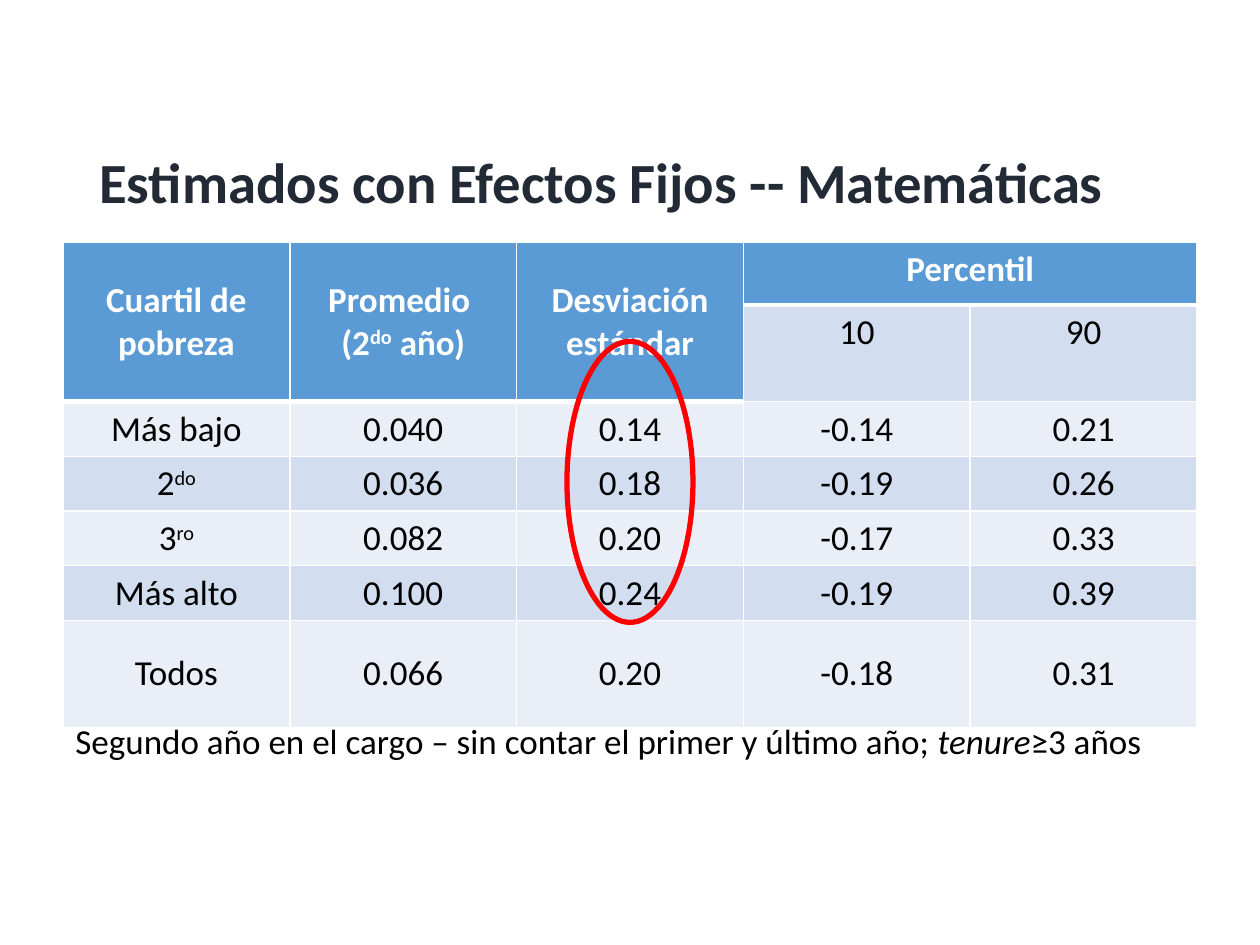
from dataclasses import dataclass

from lxml import etree
from pptx import Presentation
from pptx.dml.color import RGBColor
from pptx.enum.shapes import MSO_SHAPE
from pptx.enum.text import MSO_ANCHOR, PP_ALIGN
from pptx.oxml.ns import qn
from pptx.util import Inches, Pt

OVAL = MSO_SHAPE.OVAL
TOP, MIDDLE = MSO_ANCHOR.TOP, MSO_ANCHOR.MIDDLE
LEFT, CENTER = PP_ALIGN.LEFT, PP_ALIGN.CENTER


@dataclass(frozen=True)
class Theme:
    font: str = "Calibri"
    title_size: float = 32.4
    body_size: float = 20
    title: str = "222A35"
    text: str = "000000"
    white: str = "FFFFFF"
    header: str = "5B9BD5"
    bands: tuple = ("EAEFF7", "D2DEEF")
    highlight: str = "FF0000"
    thin: float = 1
    thick: float = 3


@dataclass(frozen=True)
class Span:
    text: str
    italic: bool = False
    superscript: bool = False


@dataclass(frozen=True)
class Style:
    size: float
    color: str
    bold: bool = False
    align: PP_ALIGN = LEFT


@dataclass(frozen=True)
class HeaderCell:
    row: int
    col: int
    last_row: int
    last_col: int
    lines: tuple
    anchor: MSO_ANCHOR = MIDDLE


THEME = Theme()
TITLE = Style(THEME.title_size, THEME.title, bold=True)
NOTE = Style(THEME.body_size, THEME.text)
HEADER = Style(THEME.body_size, THEME.white, bold=True, align=CENTER)
BODY = Style(THEME.body_size, THEME.text, align=CENTER)

HEADER_CELLS = (
    HeaderCell(0, 0, 1, 0, ((Span("Cuartil de pobreza"),),)),
    HeaderCell(0, 1, 1, 1, (
        (Span("Promedio "),),
        (Span("(2"), Span("do", superscript=True), Span(" año)")),
    )),
    HeaderCell(0, 2, 1, 2, ((Span("Desviación estándar"),),)),
    HeaderCell(0, 3, 0, 4, ((Span("Percentil"),),), TOP),
)
PERCENTILES = {3: "10", 4: "90"}
QUARTILES = (
    ((Span("Más bajo"),), "0.040", "0.14", "-0.14", "0.21"),
    ((Span("2"), Span("do", superscript=True)), "0.036", "0.18", "-0.19", "0.26"),
    ((Span("3"), Span("ro", superscript=True)), "0.082", "0.20", "-0.17", "0.33"),
    ((Span("Más alto"),), "0.100", "0.24", "-0.19", "0.39"),
    ((Span("Todos"),), "0.066", "0.20", "-0.18", "0.31"),
)
FOOTNOTE = (
    Span("Segundo año en el cargo – sin contar el primer y último año; "),
    Span("tenure", italic=True),
    Span("≥3 años"),
)
ROW_HEIGHTS = (0.5, 0.5, 0.41, 0.41, 0.41, 0.37, 0.85)
COLUMN_WIDTH = 1.8
COLUMNS = 5


def write(frame, lines: tuple, style: Style) -> None:
    """Fill a text frame with one paragraph per line of spans."""
    for index, spans in enumerate(lines):
        paragraph = frame.paragraphs[0] if index == 0 else frame.add_paragraph()
        paragraph.alignment = style.align
        font = paragraph.font
        font.name, font.size, font.bold = THEME.font, Pt(style.size), style.bold
        font.color.rgb = RGBColor.from_string(style.color)
        for span in spans:
            run = paragraph.add_run()
            run.text = span.text
            if span.italic:
                run.font.italic = True
            if span.superscript:
                run._r.get_or_add_rPr().set("baseline", "30000")


def add_text(slide, left: float, top: float, width: float, height: float,
             spans: tuple, style: Style, anchor: MSO_ANCHOR = TOP):
    box = slide.shapes.add_textbox(
        Inches(left), Inches(top), Inches(width), Inches(height))
    frame = box.text_frame
    frame.word_wrap = True
    frame.vertical_anchor = anchor
    write(frame, (spans,), style)
    return frame


def is_header(row: int, col: int) -> bool:
    return row == 0 or (row == 1 and col not in PERCENTILES)


def add_border(cell, side: str, width: float) -> None:
    line = etree.SubElement(cell._tc.get_or_add_tcPr(), qn(f"a:ln{side}"),
                            w=str(Pt(width)))
    fill = etree.SubElement(line, qn("a:solidFill"))
    etree.SubElement(fill, qn("a:srgbClr"), val=THEME.white)


def paint_cell(cell, row: int, col: int) -> None:
    header = is_header(row, col)
    below_header = row > 0 and not header and is_header(row - 1, col)
    widths = {
        "L": THEME.thin,
        "R": THEME.thin,
        "T": THEME.thick if below_header else THEME.thin,
        "B": THEME.thick if header else THEME.thin,
    }
    for side, width in widths.items():
        add_border(cell, side, width)
    cell.fill.solid()
    cell.fill.fore_color.rgb = RGBColor.from_string(
        THEME.header if header else THEME.bands[row % 2])


def add_estimates_table(slide) -> None:
    table = slide.shapes.add_table(
        len(ROW_HEIGHTS), COLUMNS, Inches(0.5), Inches(1.92),
        Inches(COLUMN_WIDTH * COLUMNS), Inches(sum(ROW_HEIGHTS))).table
    for column in table.columns:
        column.width = Inches(COLUMN_WIDTH)
    for row, height in enumerate(ROW_HEIGHTS):
        table.rows[row].height = Inches(height)
        for col in range(COLUMNS):
            paint_cell(table.cell(row, col), row, col)

    for header in HEADER_CELLS:
        cell = table.cell(header.row, header.col)
        cell.merge(table.cell(header.last_row, header.last_col))
        cell.vertical_anchor = header.anchor
        write(cell.text_frame, header.lines, HEADER)
    for col, percentile in PERCENTILES.items():
        write(table.cell(1, col).text_frame, ((Span(percentile),),), BODY)
    for row, (label, *values) in enumerate(QUARTILES, start=2):
        contents = [label] + [(Span(value),) for value in values]
        for col, spans in enumerate(contents):
            cell = table.cell(row, col)
            cell.vertical_anchor = MIDDLE
            write(cell.text_frame, (spans,), BODY)


def add_highlight(slide) -> None:
    """Ring the standard deviations of the four quartiles."""
    ring = slide.shapes.add_shape(
        OVAL, Inches(4.5), Inches(2.71), Inches(1), Inches(2.23))
    ring.shadow.inherit = False
    ring.fill.background()
    ring.line.color.rgb = RGBColor.from_string(THEME.highlight)
    ring.line.width = Pt(THEME.thick)


def main() -> None:
    deck = Presentation()
    deck.slide_width, deck.slide_height = Inches(10), Inches(7.5)
    slide = deck.slides.add_slide(deck.slide_layouts[6])
    title = add_text(slide, 0.69, 1.09, 8.62, 0.76,
                     (Span("Estimados con Efectos Fijos -- Matemáticas"),),
                     TITLE, MIDDLE)
    title.paragraphs[0].line_spacing = 0.9
    add_estimates_table(slide)
    add_text(slide, 0.5, 5.66, 9, 0.44, FOOTNOTE, NOTE)
    add_highlight(slide)
    deck.save("out.pptx")


if __name__ == "__main__":
    main()
